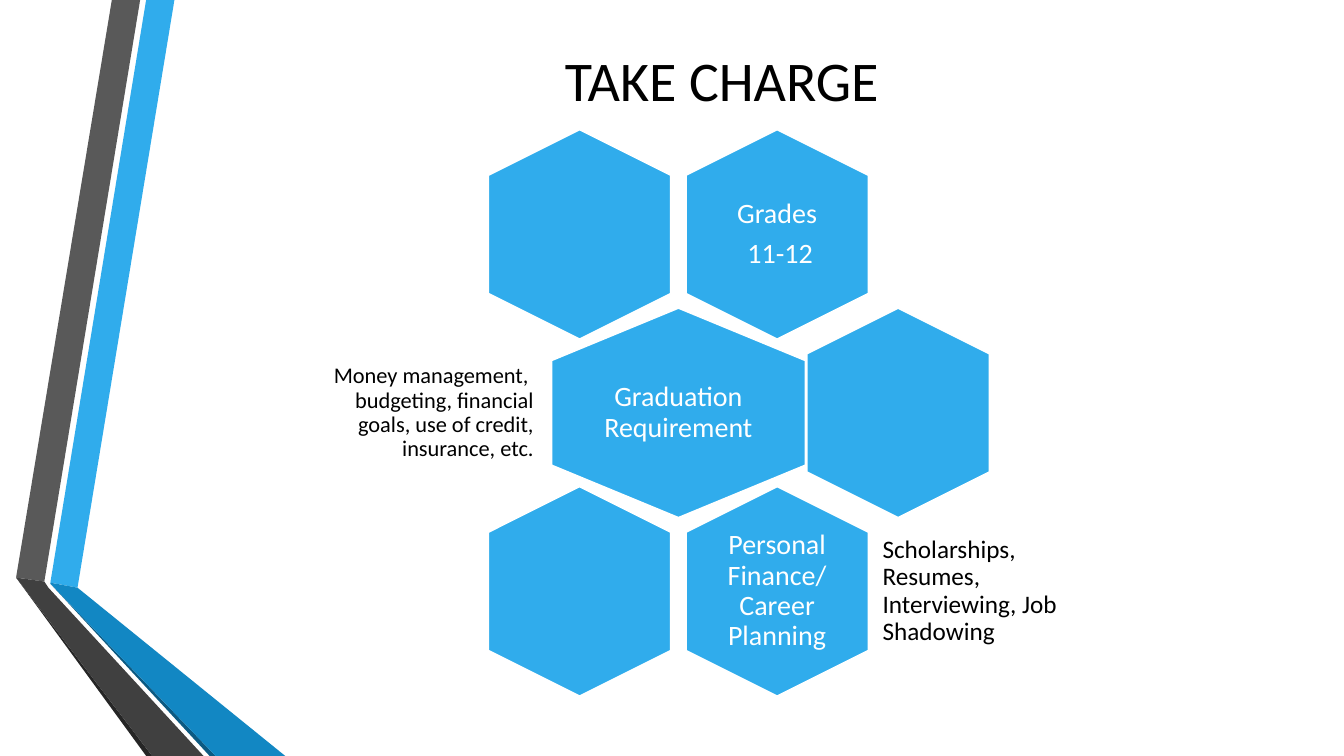
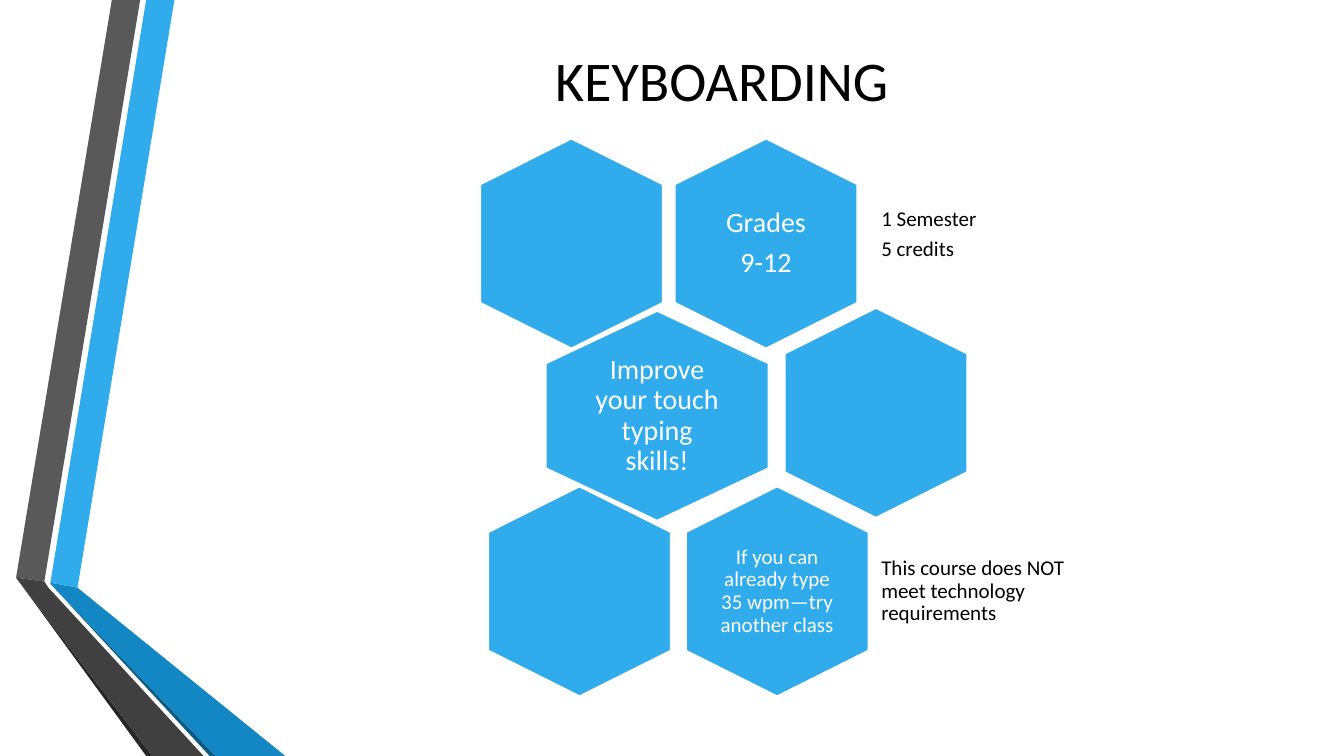
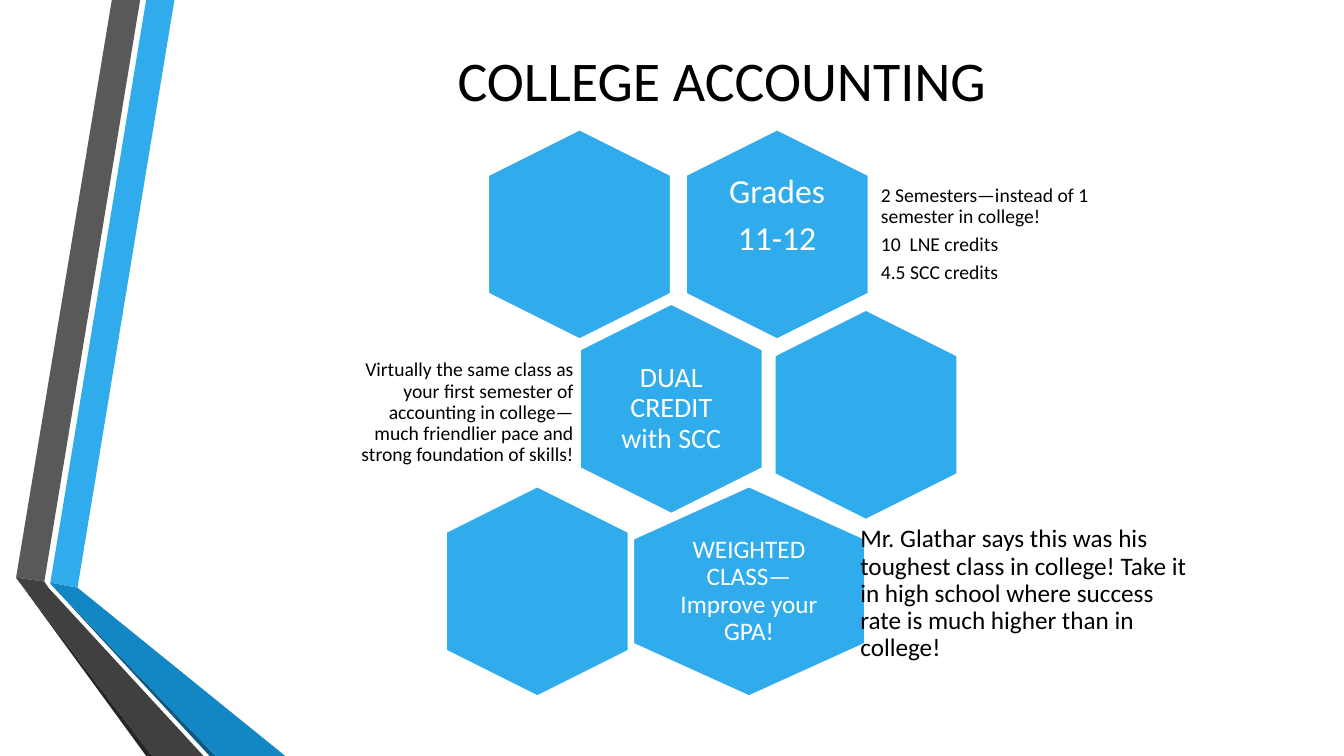
from dataclasses import dataclass

from pptx import Presentation
from pptx.dml.color import RGBColor
from pptx.enum.shapes import MSO_SHAPE
from pptx.enum.text import MSO_ANCHOR, PP_ALIGN
from pptx.util import Pt

HEXAGON = MSO_SHAPE.HEXAGON
MIDDLE = MSO_ANCHOR.MIDDLE
LEFT, CENTER, RIGHT = PP_ALIGN.LEFT, PP_ALIGN.CENTER, PP_ALIGN.RIGHT

BLACK = RGBColor(0x00, 0x00, 0x00)
WHITE = RGBColor(0xFF, 0xFF, 0xFF)
BLUE = RGBColor(0x30, 0xAC, 0xEC)
BLUE_FOLD = RGBColor(0x12, 0x87, 0xC3)
BLUE_EDGE = RGBColor(0x0C, 0x5A, 0x82)
GREY = RGBColor(0x59, 0x59, 0x59)
GREY_FOLD = RGBColor(0x40, 0x40, 0x40)
GREY_EDGE = RGBColor(0x26, 0x26, 0x26)

FONT = "Calibri"
HEX_WIDTH, HEX_HEIGHT = 130.4, 149.8
ROWS = 3


@dataclass
class Box:
    left: float
    top: float
    width: float
    height: float


@dataclass
class Cell:
    """A hexagon, centred at x in a row of the board."""
    x: float
    row: int
    label: tuple = ()
    size: float = 20
    width: float = HEX_WIDTH
    shift: float = 0
    lift: float = 0


@dataclass
class Caption:
    """Plain text beside a hexagon, starting at x in a row of the board."""
    x: float
    row: int
    lines: tuple
    size: float
    width: float = 167.8
    height: float = 90
    align: PP_ALIGN = LEFT
    shift: float = 0


TITLE = Box(121, 15.1, 789.1, 83.5)
BOARD = Box(224, 103.7, 634, 382.4)

# Folded ribbons on the left edge, back to front
RIBBONS = [
    (BLUE, [(36, 416.2), (55.4, 419.8), (124.6, 0), (104.4, 0)]),
    (GREY, [(100.1, 0), (79.9, 0), (11.5, 412.6), (31.7, 415.4)]),
    (GREY_EDGE, [(11.5, 412.6), (104.4, 540), (108.7, 540)]),
    (BLUE_EDGE, [(36, 416.9), (149.8, 540), (154.1, 540)]),
    (BLUE_FOLD, [(36, 416.9), (154.1, 540), (203.8, 540), (55.4, 419.8),
                 (36, 416.2)]),
    (GREY_FOLD, [(145.4, 540), (34.6, 419.8), (31.7, 415.4), (11.5, 412.6),
                 (108.7, 540)]),
]

PAGES = [
    ("TAKE CHARGE",
     [Cell(331.1, 0, ("Grades", " 11-12")),
      Cell(190, 0),
      Cell(260.6, 1, ("Graduation Requirement",), width=181.4),
      Cell(417.5, 1),
      Cell(331.1, 2, ("Personal Finance/Career Planning",)),
      Cell(190, 2)],
     [Caption(0, 1, ("Money management,  budgeting, financial goals, "
                     "use of credit, insurance, etc.",), 16, 162, align=RIGHT),
      Caption(401, 2, ("Scholarships, Resumes, Interviewing, Job Shadowing",),
              18)]),
    ("KEYBOARDING",
     [Cell(323.2, 0, ("Grades", "9-12"), shift=6.5),
      Cell(184.2, 0, shift=6.5),
      Cell(245.4, 1, ("Improve your touch typing skills!",), width=159.1,
           shift=2.1),
      Cell(401.7, 1),
      Cell(331.1, 2, ("If you can already type 35 wpm—try another class",),
           15),
      Cell(190, 2)],
     [Caption(401, 0, ("1 Semester", "5 credits"), 15),
      Caption(401, 2, ("This course does NOT meet technology requirements",),
              15)]),
    ("COLLEGE ACCOUNTING",
     [Cell(331.1, 0, ("Grades", "11-12"), 24, lift=13.2),
      Cell(190, 0),
      Cell(255.5, 1, ("DUAL CREDIT with SCC",), shift=-2.9),
      Cell(394.5, 1, shift=1.4),
      Cell(311, 2, ("WEIGHTED CLASS—Improve your GPA!",), 18, width=165.6),
      Cell(159.8, 2)],
     [Caption(401, 0, ("2 Semesters—instead of 1 semester in college!",
                       "10  LNE credits", "4.5 SCC credits"), 14),
      Caption(28, 1, ("Virtually the same class as your first semester of "
                      "accounting in college—much friendlier pace and strong "
                      "foundation of skills!",), 14, 162, align=RIGHT),
      Caption(385.1, 2, ("Mr. Glathar says this was his toughest class in "
                         "college! Take it in high school where success rate "
                         "is much higher than in college!",), 18, 248.4,
              124.6, shift=2.1)]),
]


def add_text(page, box, lines, size, color, align):
    """Add a vertically centred text box and return its frame."""
    frame = page.shapes.add_textbox(
        Pt(box.left), Pt(box.top), Pt(box.width), Pt(box.height)).text_frame
    frame.word_wrap = True
    frame.vertical_anchor = MIDDLE
    for index, line in enumerate(lines):
        para = frame.paragraphs[0] if index == 0 else frame.add_paragraph()
        para.alignment = align
        span = para.add_run()
        span.text = line
        span.font.name = FONT
        span.font.size = Pt(size)
        span.font.color.rgb = color
    return frame


def add_board_text(page, box, lines, size, color, align):
    """Add text with margins and spacing in proportion to its size."""
    frame = add_text(page, box, lines, size, color, align)
    frame.margin_left = frame.margin_right = Pt(0.3 * size)
    frame.margin_top = frame.margin_bottom = Pt(0.3 * size)
    for para in frame.paragraphs:
        para.line_spacing = 0.9
        para.space_after = Pt(0.33 * size)


def add_ribbons(page, layout):
    """Draw the ribbons and hand them to the layout all pages share."""
    for placeholder in list(layout.placeholders):
        layout.shapes.element.remove(placeholder.element)
    for color, corners in RIBBONS:
        start, *others = [(Pt(x), Pt(y)) for x, y in corners]
        builder = page.shapes.build_freeform(*start)
        builder.add_line_segments(others, close=True)
        ribbon = builder.convert_to_shape()
        ribbon.shadow.inherit = False
        ribbon.fill.solid()
        ribbon.fill.fore_color.rgb = color
        ribbon.line.fill.background()
        layout.shapes.element.append(ribbon.element)


def row_middle(board, row):
    return board.top + board.height * (row + 0.5) / ROWS


def add_cell(page, board, cell):
    """Draw one upright hexagon with its label."""
    x = board.left + cell.x
    y = row_middle(board, cell.row) + cell.shift
    # The preset lies on its side, so it is turned a quarter
    hexagon = page.shapes.add_shape(
        HEXAGON, Pt(x - HEX_HEIGHT / 2), Pt(y - cell.width / 2),
        Pt(HEX_HEIGHT), Pt(cell.width))
    hexagon.rotation = 90
    hexagon.shadow.inherit = False
    hexagon.fill.solid()
    hexagon.fill.fore_color.rgb = BLUE
    hexagon.line.color.rgb = WHITE
    hexagon.line.width = Pt(1.25)
    if cell.label:
        share = 0.69 if cell.width == HEX_WIDTH else 2 / 3
        width, height = share * cell.width, share * HEX_HEIGHT
        box = Box(x - width / 2, y - height / 2 - cell.lift, width, height)
        add_board_text(page, box, cell.label, cell.size, WHITE, CENTER)


def add_caption(page, board, caption):
    y = row_middle(board, caption.row) + caption.shift
    box = Box(board.left + caption.x, y - caption.height / 2,
              caption.width, caption.height)
    add_board_text(page, box, caption.lines, caption.size, BLACK,
                   caption.align)


def add_honeycomb(page, board, cells, captions):
    for cell in cells:
        add_cell(page, board, cell)
    for caption in captions:
        add_caption(page, board, caption)


def main():
    deck = Presentation()
    deck.slide_width, deck.slide_height = Pt(960), Pt(540)
    layout = deck.slide_layouts[6]
    for index, (title, cells, captions) in enumerate(PAGES):
        page = deck.slides.add_slide(layout)
        if index == 0:
            add_ribbons(page, layout)
        add_text(page, TITLE, (title,), 40, BLACK, CENTER)
        add_honeycomb(page, BOARD, cells, captions)
    deck.save("out.pptx")


if __name__ == "__main__":
    main()
